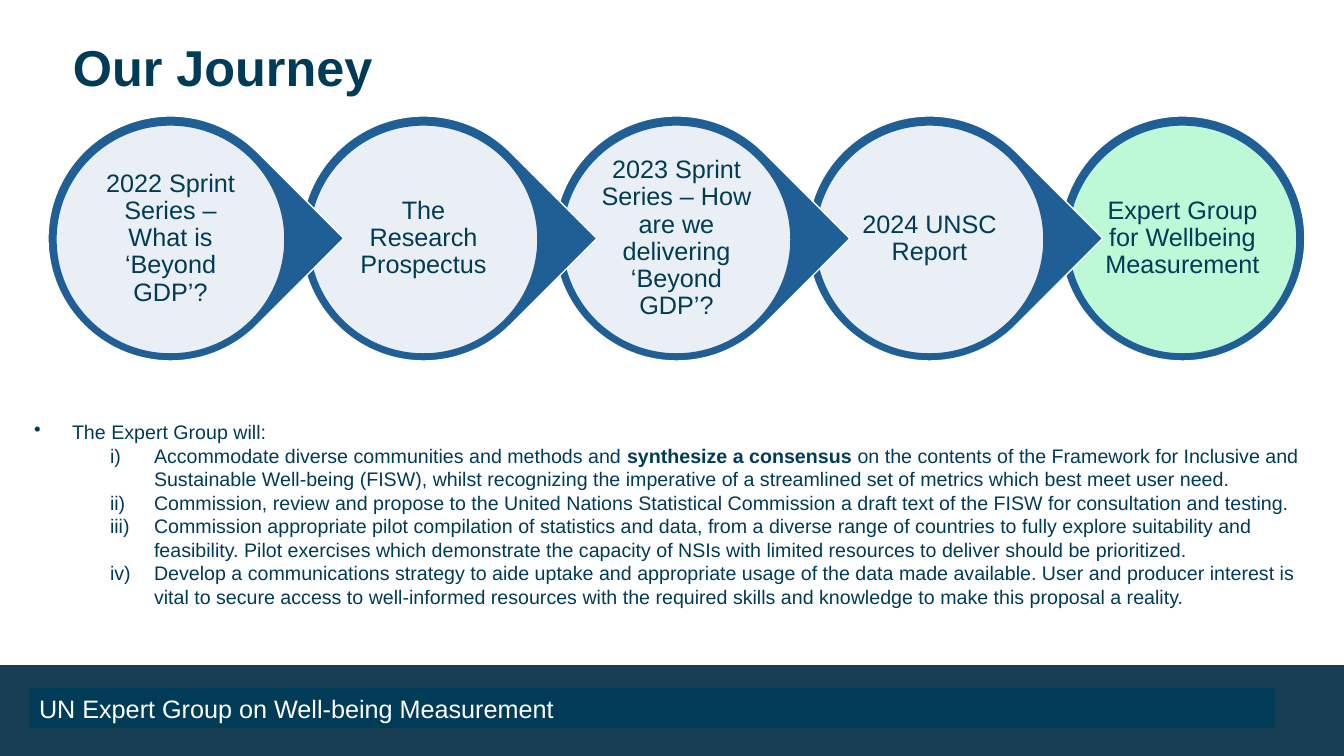
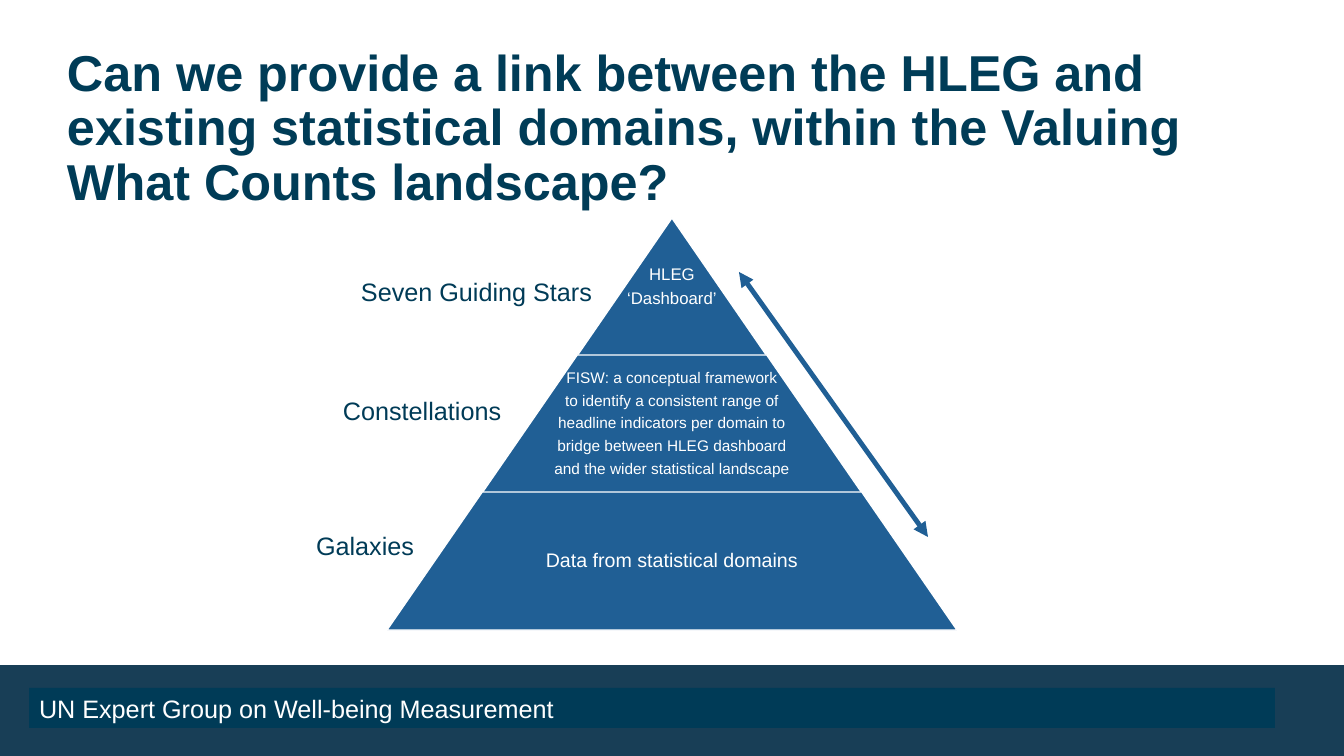
"""Build two slides on the Expert Group's journey and its statistical pyramid."""
from dataclasses import dataclass

from pptx import Presentation
from pptx.dml.color import RGBColor
from pptx.enum.shapes import MSO_CONNECTOR, MSO_SHAPE
from pptx.enum.text import MSO_ANCHOR, PP_ALIGN
from pptx.oxml.ns import qn
from pptx.util import Emu, Pt
from lxml.etree import SubElement


@dataclass(frozen=True)
class Theme:
    font: str = "Arial"
    title: str = "003C57"
    ink: str = "003B57"
    band: str = "183E56"
    blue: str = "205F95"
    pale: str = "E9EFF4"
    green: str = "BDF8D7"
    white: str = "FFFFFF"
    title_size: int = 36
    label_size: int = 18
    body_size: int = 14


theme = Theme()
PX = 914400 / 100.8


def draw(slide, kind, box, fill, line=None):
    shape = slide.shapes.add_shape(kind, *[Emu(round(length * PX)) for length in box])
    shape.shadow.inherit = False
    shape.fill.solid()
    shape.fill.fore_color.rgb = RGBColor.from_string(fill)
    if line:
        shape.line.color.rgb = RGBColor.from_string(line)
        shape.line.width = Pt(1)
    else:
        shape.line.fill.background()
    return shape


def write(slide, lines, box, shape=None, size=theme.label_size, color=theme.ink,
          bold=False, align=PP_ALIGN.LEFT, anchor=MSO_ANCHOR.TOP, insets=(10, 5, 10, 5),
          line_spacing=None, space_after=0, wrap=True, bullets=()):
    """Write one paragraph per line, with **bold** passages and optional bullets."""
    shape = shape or slide.shapes.add_textbox(*[Emu(round(length * PX)) for length in box])
    frame = shape.text_frame
    frame.word_wrap = wrap
    frame.vertical_anchor = anchor
    frame.margin_left, frame.margin_top, frame.margin_right, frame.margin_bottom = [
        Emu(round(inset * PX)) for inset in insets]
    for index, line in enumerate(lines):
        para = frame.add_paragraph() if index else frame.paragraphs[0]
        para.alignment = align
        para.space_after = Pt(space_after)
        if line_spacing:
            para.line_spacing = line_spacing
        if bullets:
            left, hanging, tag, attribute, value = bullets[index]
            properties = para._p.get_or_add_pPr()
            properties.set("marL", str(round(left * PX)))
            properties.set("indent", str(round(-hanging * PX)))
            SubElement(properties, qn(tag)).set(attribute, value)
        for position, piece in enumerate(line.split("**")):
            span = para.add_run()
            span.text = piece
            span.font.name = theme.font
            span.font.size = Pt(size)
            span.font.bold = bold or position % 2 == 1
            span.font.color.rgb = RGBColor.from_string(color)


deck = Presentation()
deck.slide_width = Emu(round(1344 * PX))
deck.slide_height = Emu(round(756 * PX))

titles = [
    ("Our Journey", (73, 38, 1159, 66)),
    ("Can we provide a link between the HLEG and existing statistical domains, "
     "within the Valuing What Counts landscape?", (67, 43, 1159, 175)),
]
pages = []
for title, title_box in titles:
    page = deck.slides.add_slide(deck.slide_layouts[6])
    draw(page, MSO_SHAPE.RECTANGLE, (0, 665, 1344, 91), theme.band)
    write(page, [title], title_box, size=theme.title_size, color=theme.title, bold=True,
          insets=(0, 5, 10, 5), line_spacing=0.9)
    footer_box = (29, 688, 1246, 40)
    footer = draw(page, MSO_SHAPE.RECTANGLE, footer_box, theme.ink)
    write(page, ["UN Expert Group on Well-being Measurement"], footer_box, shape=footer,
          color=theme.white, anchor=MSO_ANCHOR.MIDDLE)
    pages.append(page)
journey, pyramid = pages

steps = [
    "2022 Sprint Series – What is ‘Beyond GDP’?",
    "The Research Prospectus",
    "2023 Sprint Series – How are we delivering ‘Beyond GDP’?",
    "2024 UNSC Report",
    "Expert Group for Wellbeing Measurement",
]
last = len(steps) - 1
for index, step in reversed(list(enumerate(steps))):
    left = 48 + 253 * index
    outer_kind = MSO_SHAPE.OVAL if index == last else MSO_SHAPE.TEAR
    outer = draw(journey, outer_kind, (left, 116, 245, 245), theme.blue, theme.white)
    if index < last:
        outer.rotation = 45
    draw(journey, MSO_SHAPE.OVAL, (left + 8, 125, 229, 229),
         theme.green if index == last else theme.pale, theme.blue)
    write(journey, [step], (left + 41, 157, 163, 163), align=PP_ALIGN.CENTER,
          anchor=MSO_ANCHOR.MIDDLE, insets=(3, 3, 3, 3), line_spacing=0.9)

tasks = [
    "The Expert Group will:",
    "Accommodate diverse communities and methods and **synthesize a consensus **on the "
    "contents of the Framework for Inclusive and Sustainable Well-being (FISW), whilst "
    "recognizing the imperative of a streamlined set of metrics which best meet user need.",
    "Commission, review and propose to the United Nations Statistical Commission a draft "
    "text of the FISW for consultation and testing.",
    "Commission appropriate pilot compilation of statistics and data, from a diverse range "
    "of countries to fully explore suitability and feasibility. Pilot exercises which "
    "demonstrate the capacity of NSIs with limited resources to deliver should be prioritized.",
    "Develop a communications strategy to aide uptake and appropriate usage of the data made "
    "available. User and producer interest is vital to secure access to well-informed "
    "resources with the required skills and knowledge to make this proposal a reality.",
]
dot = (38, 38, "a:buChar", "char", "•")
roman = (120, 44, "a:buAutoNum", "type", "romanLcParenR")
write(journey, tasks, (24, 415, 1296, 201), size=theme.body_size,
      bullets=[dot] + [roman] * (len(tasks) - 1))

tiers = [
    (["HLEG", "‘Dashboard’"], 12, 190),
    (["FISW: a conceptual framework", "to identify a consistent range of",
      "headline indicators per domain to", "bridge between HLEG dashboard",
      "and the wider statistical landscape"], 11, 246),
    (["Data from statistical domains"], theme.body_size, 370),
]
for index, (lines, size, text_width) in enumerate(tiers):
    top = 218 + 137 * index
    half_width = 95 * (index + 1)
    tier = draw(pyramid, MSO_SHAPE.TRAPEZOID, (672 - half_width, top, 2 * half_width, 138),
                theme.blue, theme.white)
    tier.adjustments[0] = 0.69
    write(pyramid, lines, (672 - text_width / 2, top, text_width, 138), size=size,
          color=theme.white, align=PP_ALIGN.CENTER, anchor=MSO_ANCHOR.MIDDLE,
          insets=(2, 2, 2, 2), line_spacing=0.9, space_after=round(size * 0.4, 1))

labels = [
    ("Seven Guiding Stars", (351, 271, 254, 40)),
    ("Constellations", (333, 390, 180, 40)),
    ("Galaxies", (306, 525, 119, 40)),
]
for label, label_box in labels:
    write(pyramid, [label], label_box, wrap=False)

arrow = pyramid.shapes.add_connector(
    MSO_CONNECTOR.STRAIGHT, *[Emu(round(length * PX)) for length in (739, 272, 928, 537)])
arrow.line.color.rgb = RGBColor.from_string(theme.blue)
arrow.line.width = Pt(3.5)
outline = arrow.line._get_or_add_ln()
for end in ("a:headEnd", "a:tailEnd"):
    SubElement(outline, qn(end)).set("type", "triangle")
SubElement(arrow._element.spPr, qn("a:effectLst"))

deck.save("out.pptx")
